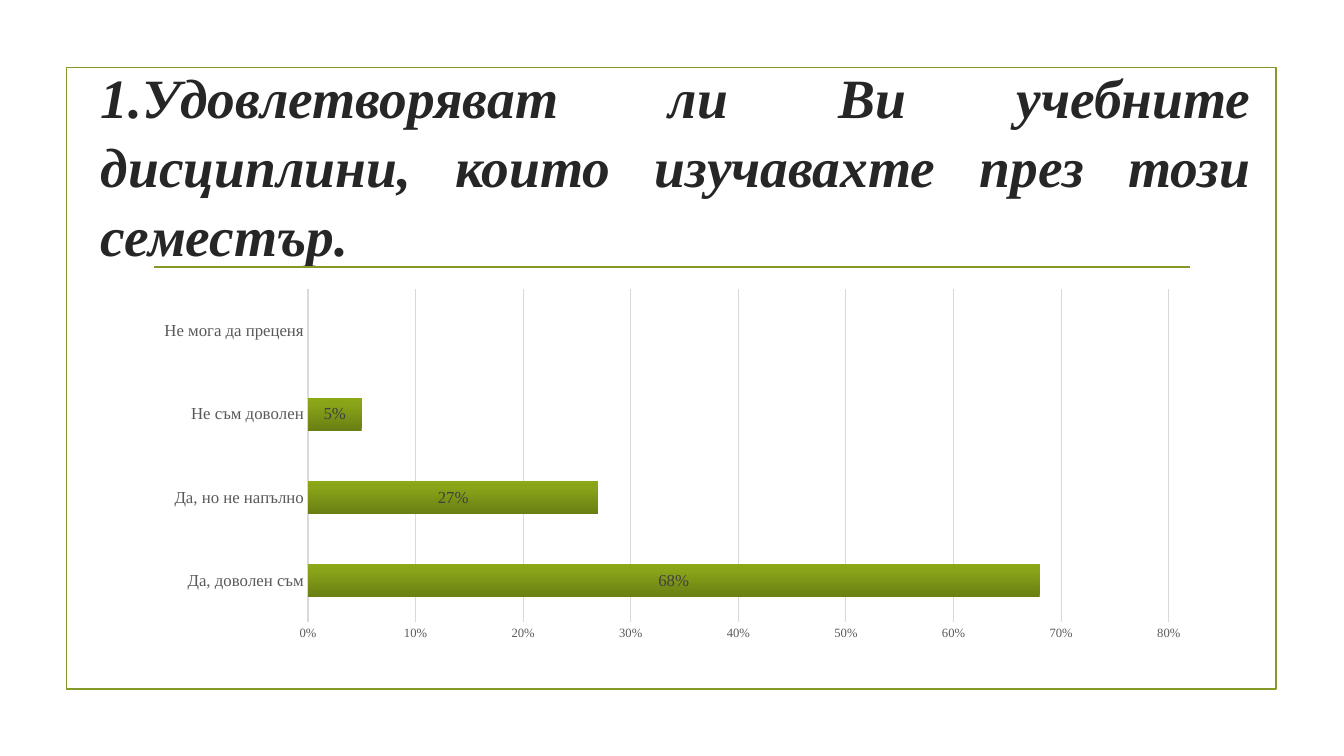
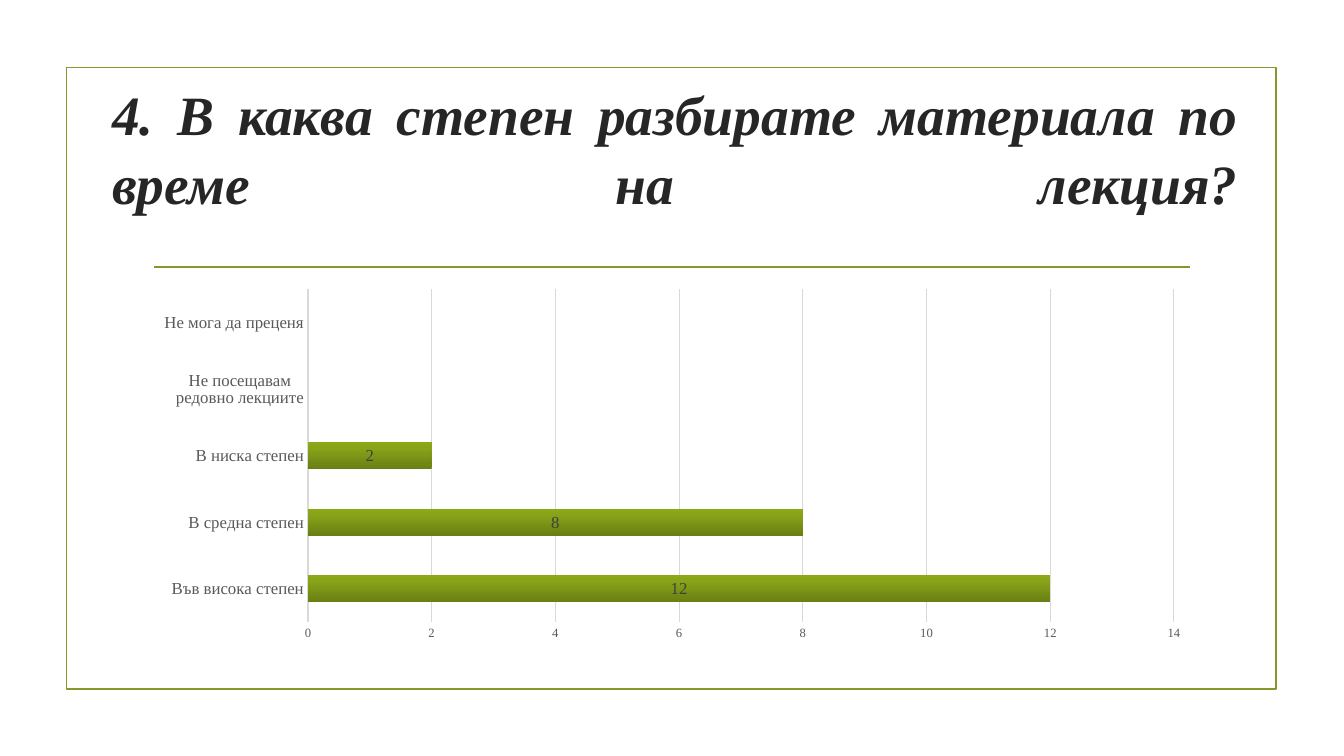
from copy import deepcopy
from dataclasses import dataclass

from lxml import etree
from pptx import Presentation
from pptx import util as u
from pptx.chart import data as chart_data
from pptx.dml.color import RGBColor
from pptx.enum import chart as charts, shapes, text
from pptx.oxml.ns import qn


@dataclass(frozen=True)
class Theme:
    font: str = "Times New Roman"
    accent: str = "83992A"
    title: str = "262626"
    axis: str = "595959"
    value: str = "404040"
    grid: str = "D9D9D9"
    bar: tuple = ((0, "697F13"), (0.8, "89A419"), (1, "8BA816"))
    title_size: float = 39.6
    label_size: float = 12
    scale_size: float = 9
    rule_width: float = 1.25


class SurveyDeck:
    """Holds the style and the current slide."""

    def __init__(self, theme):
        self.theme = theme
        self.presentation = Presentation()
        self.presentation.slide_width = u.Cm(33.87)
        self.presentation.slide_height = u.Cm(19.05)
        self.slide = None

    # Style helpers
    def style_font(self, font, size, color):
        font.name = self.theme.font
        font.size = u.Pt(size)
        font.color.rgb = RGBColor.from_string(color)

    def style_line(self, line, color, width):
        line.color.rgb = RGBColor.from_string(color)
        line.width = u.Pt(width)

    # Slide with its frame and rule
    def add_slide(self):
        layout = self.presentation.slide_layouts.get_by_name("Title Only")
        self.slide = self.presentation.slides.add_slide(layout)
        self.add_frame()
        self.add_rule()

    def add_frame(self):
        frame = self.slide.shapes.add_shape(
            shapes.MSO_SHAPE.RECTANGLE,
            u.Cm(1.68), u.Cm(1.7), u.Cm(30.48), u.Cm(15.67))
        frame.shadow.inherit = False
        frame.fill.background()
        self.style_line(frame.line, self.theme.accent, self.theme.rule_width)

    def add_rule(self):
        rule = self.slide.shapes.add_connector(
            shapes.MSO_CONNECTOR.STRAIGHT,
            u.Cm(3.89), u.Cm(6.73), u.Cm(30), u.Cm(6.73))
        self.style_line(rule.line, self.theme.accent, self.theme.rule_width)
        etree.SubElement(rule._element.spPr, qn("a:effectLst"))

    # Question
    def add_title(self, question, left, top, width, height):
        title = self.slide.shapes.title
        title.left, title.top = u.Cm(left), u.Cm(top)
        title.width, title.height = u.Cm(width), u.Cm(height)
        frame = title.text_frame
        frame.text = question
        frame.word_wrap = True
        frame.auto_size = text.MSO_AUTO_SIZE.NONE
        frame.vertical_anchor = text.MSO_ANCHOR.MIDDLE
        paragraph = frame.paragraphs[0]
        paragraph.alignment = text.PP_ALIGN.JUSTIFY
        paragraph.line_spacing = 1.04
        self.style_font(paragraph.font, self.theme.title_size, self.theme.title)
        paragraph.font.bold = True
        paragraph.font.italic = True

    # Answers
    def add_bar_chart(self, answers, maximum, step, number_format="General"):
        data = chart_data.CategoryChartData(number_format=number_format)
        data.categories = list(answers)
        data.add_series("Series 1", list(answers.values()))
        chart = self.slide.shapes.add_chart(
            charts.XL_CHART_TYPE.BAR_STACKED,
            u.Cm(3.61), u.Cm(7.11), u.Cm(26.67), u.Cm(9.22), data).chart
        chart.has_title = False
        chart.has_legend = False
        self.style_font(chart.font, 10, "000000")
        self.style_axes(chart, maximum, step, number_format)
        self.style_bars(chart.plots[0], number_format)

    def style_axes(self, chart, maximum, step, number_format):
        theme = self.theme
        category, value = chart.category_axis, chart.value_axis
        for axis, size in ((category, theme.label_size),
                           (value, theme.scale_size)):
            axis.major_tick_mark = charts.XL_TICK_MARK.NONE
            axis.minor_tick_mark = charts.XL_TICK_MARK.NONE
            self.style_font(axis.tick_labels.font, size, theme.axis)
        category.has_major_gridlines = False
        self.style_line(category.format.line, theme.grid, 1)
        value.minimum_scale, value.maximum_scale = 0, maximum
        value.major_unit = step
        value.has_major_gridlines = True
        self.style_line(value.major_gridlines.format.line, theme.grid, 0.75)
        value.format.line.fill.background()
        value.tick_labels.number_format = number_format
        value.tick_labels.number_format_is_linked = False

    def style_bars(self, plot, number_format):
        plot.gap_width = 150
        plot.overlap = 100
        plot.vary_by_categories = False
        # Bar gradient, with a third stop added to the default two
        series = plot.series[0]
        fill = series.format.fill
        fill.gradient()
        fill.gradient_angle = 90
        stop_list = series._element.find(".//" + qn("a:gsLst"))
        stop_list.append(deepcopy(stop_list[-1]))
        for stop, (position, color) in zip(fill.gradient_stops, self.theme.bar):
            stop.position = position
            stop.color.rgb = RGBColor.from_string(color)
        # Values on the bars
        labels = series.data_labels
        labels.show_value = True
        labels.number_format = number_format
        labels.number_format_is_linked = False
        self.style_font(labels.font, self.theme.label_size, self.theme.value)


def main():
    deck = SurveyDeck(Theme())

    # Satisfaction with the courses
    deck.add_slide()
    deck.add_title(
        "1.Удовлетворяват ли Ви учебните дисциплини, "
        "които изучавахте през този семестър.",
        2.29, 1.93, 29.49, 4.42)
    deck.add_bar_chart(
        {"Да, доволен съм": 0.68, "Да, но не напълно": 0.27,
         "Не съм доволен": 0.05, "Не мога да преценя": None},
        maximum=0.8, step=0.1, number_format="0%")

    # Understanding of lectures; the closing break justifies the last line
    deck.add_slide()
    deck.add_title(
        "4. В каква степен разбирате материала по време на лекция?\v",
        2.57, 2.72, 28.88, 3.63)
    deck.add_bar_chart(
        {"Във висока степен": 12, "В средна степен": 8, "В ниска степен": 2,
         "Не посещавам редовно лекциите": None, "Не мога да преценя": None},
        maximum=14, step=2)

    deck.presentation.save("out.pptx")


if __name__ == "__main__":
    main()
